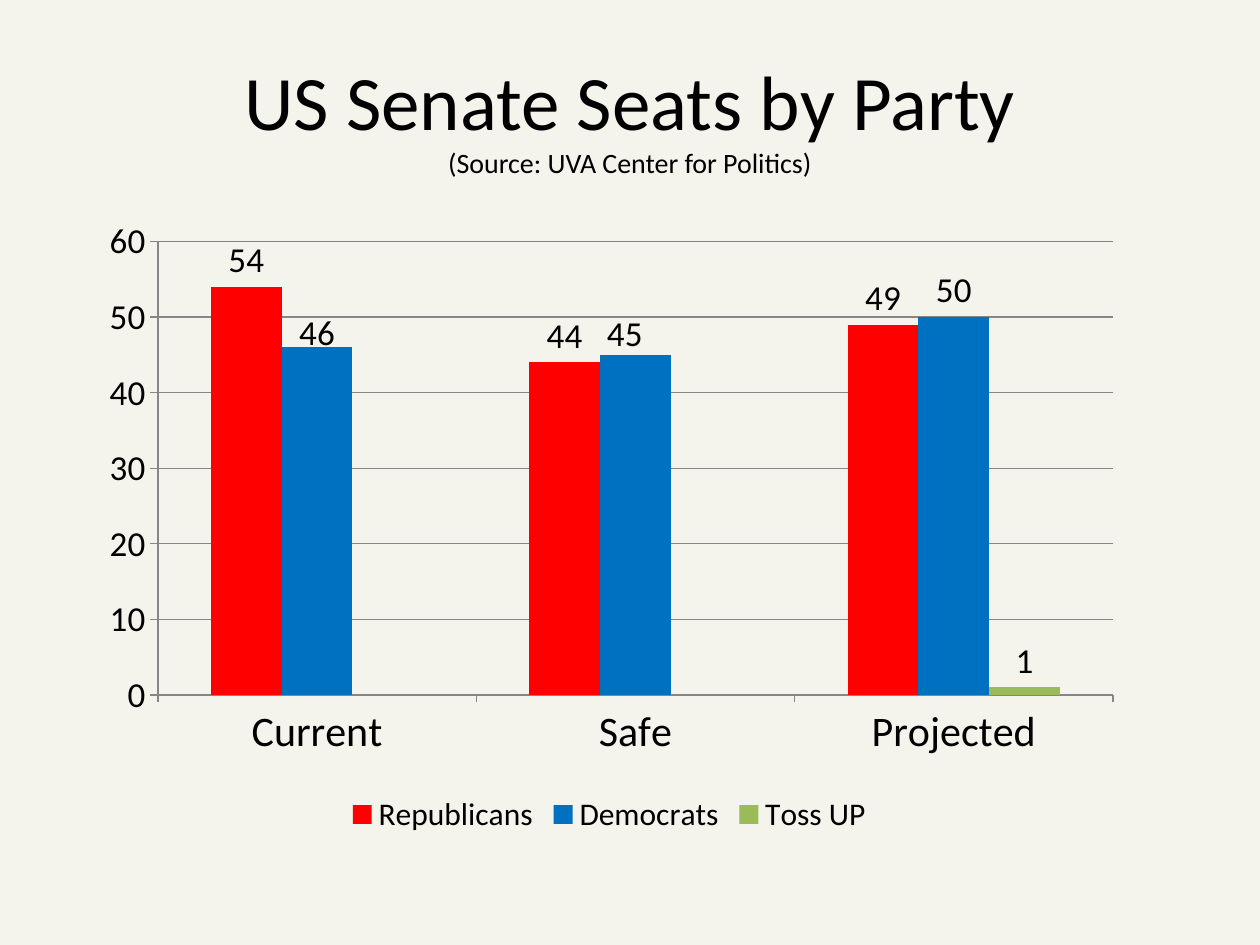
from lxml import etree
from pptx import Presentation
from pptx import util as u
from pptx.chart.data import CategoryChartData
from pptx.dml.color import RGBColor
from pptx.enum import chart as ch, text
from pptx.oxml.ns import qn


def paint(color, code):
    color.rgb = RGBColor.from_string(code)


def place(parent, spot, vals):
    lay = etree.Element(qn("c:layout"))
    man = etree.SubElement(lay, qn("c:manualLayout"))
    for tag, val in vals.items():
        etree.SubElement(man, qn("c:" + tag)).set("val", str(val))
    for old in parent.findall(qn("c:layout")):
        parent.remove(old)
    parent.insert(spot, lay)


prs = Presentation()
wide, high = u.Inches(10), u.Inches(7.5)
prs.slide_width, prs.slide_height = wide, high
slide = prs.slides.add_slide(prs.slide_layouts[5])
back = slide.background.fill
back.solid()
paint(back.fore_color, "F4F3EC")

title = slide.shapes.title
box = {"left": 0.05 * wide, "top": 0.04 * high, "width": 0.9 * wide, "height": high / 6}
for key, val in box.items():
    setattr(title, key, int(val))
frame = title.text_frame
frame.vertical_anchor = text.MSO_ANCHOR.MIDDLE
para = frame.paragraphs[0]
para.alignment = text.PP_ALIGN.CENTER
for words, size in [("US Senate Seats by Party", 44), ("(Source: UVA Center for Politics)", 16)]:
    if para.runs:
        para.add_line_break()
    run = para.add_run()
    run.text = words
    for key, val in {"size": u.Pt(size), "name": "Calibri"}.items():
        setattr(run.font, key, val)
    paint(run.font.color, "000000")

seats = {
    "Republicans": ([54, 44, 49], "FF0000"),
    "Democrats": ([46, 45, 50], "0070C0"),
    "Toss UP": ([None, None, 1], "9BBB59"),
}
data = CategoryChartData()
data.categories = ["Current", "Safe", "Projected"]
for name, (vals, code) in seats.items():
    data.add_series(name, vals)
area = [int(n) for n in (0.067 * wide, high * 2 / 9, 0.833 * wide, high * 2 / 3)]
chart = slide.shapes.add_chart(ch.XL_CHART_TYPE.COLUMN_CLUSTERED, *area, data).chart
chart.has_title = False
chart.font.name = "Calibri"
chart.font.size = u.Pt(10)
paint(chart.font.color, "000000")

chart.has_legend = True
for key, val in {"position": ch.XL_LEGEND_POSITION.BOTTOM, "include_in_layout": False}.items():
    setattr(chart.legend, key, val)
chart.legend.font.size = u.Pt(18)

cat, val_ax = chart.category_axis, chart.value_axis
for key, val in {"minimum_scale": 0, "maximum_scale": 60, "major_unit": 10, "has_major_gridlines": True}.items():
    setattr(val_ax, key, val)
for axis, size in [(cat, 24), (val_ax, 20)]:
    axis.major_tick_mark = ch.XL_TICK_MARK.OUTSIDE
    axis.tick_labels.font.size = u.Pt(size)
for line in (cat.format.line, val_ax.format.line, val_ax.major_gridlines.format.line):
    line.width = u.Pt(0.75)
    paint(line.color, "868686")

plot = chart.plots[0]
for key, val in {"gap_width": 150, "overlap": 0, "vary_by_categories": False}.items():
    setattr(plot, key, val)
above = ch.XL_LABEL_POSITION.OUTSIDE_END
for bars, (vals, code) in zip(plot.series, seats.values()):
    bars.format.fill.solid()
    paint(bars.format.fill.fore_color, code)
    tags = bars.data_labels
    for key, val in {"show_value": True, "position": above}.items():
        setattr(tags, key, val)
    tags.font.size = u.Pt(20)

dems = plot.series[1]
for idx, (x, y) in enumerate([(0, 0.02), (-0.01, 0.01)]):
    tag = dems.points[idx].data_label
    tag.position = above
    tag.font.size = u.Pt(20)
    node = dems._element.findall(".//" + qn("c:dLbl"))[idx]
    place(node, 1, {"x": x, "y": y})

place(plot._element.getparent(), 0, {
    "layoutTarget": "inner", "xMode": "edge", "yMode": "edge",
    "x": 0.07, "y": 0.05, "w": 0.91, "h": 0.72,
})
prs.save("out.pptx")
